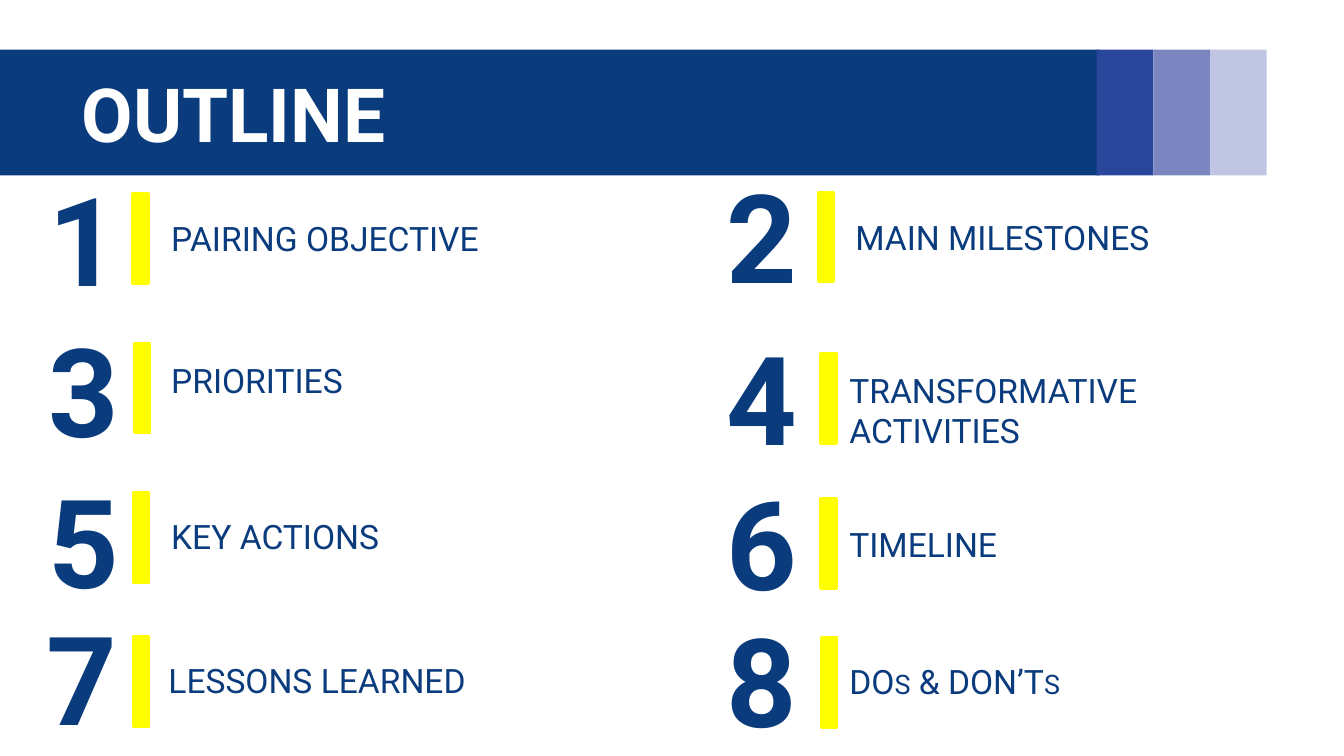
"""Build the outline slide: a title band over eight numbered topics in two columns."""
from dataclasses import dataclass

from pptx import Presentation
from pptx.dml.color import RGBColor
from pptx.enum.shapes import MSO_SHAPE
from pptx.enum.text import MSO_ANCHOR
from pptx.util import Inches, Pt


@dataclass(frozen=True)
class Theme:
    font: str = "Roboto"
    navy: str = "0A3B7D"
    blue: str = "2A469B"
    lilac: str = "7B86C0"
    mist: str = "C1C5E4"
    yellow: str = "FFFE01"
    white: str = "FFFFFF"
    title_size: int = 40
    number_size: int = 66
    label_size: int = 18
    bar_line: int = 2


theme = Theme()
deck = Presentation()
deck.slide_width = Inches(10)
deck.slide_height = deck.slide_width * 9 // 16
page = deck.slides.add_slide(deck.slide_layouts[6])
cell = deck.slide_width / 100


def add_block(area, color, line_width=0):
    block = page.shapes.add_shape(MSO_SHAPE.RECTANGLE, *(round(side * cell) for side in area))
    block.shadow.inherit = False
    block.fill.solid()
    block.fill.fore_color.rgb = RGBColor.from_string(color)
    if line_width:
        block.line.color.rgb = RGBColor.from_string(color)
        block.line.width = Pt(line_width)
    else:
        block.line.fill.background()


def add_text(area, runs, size, color, bold=False, inset=0, anchor=MSO_ANCHOR.TOP):
    box = page.shapes.add_textbox(*(round(side * cell) for side in area))
    frame = box.text_frame
    frame.word_wrap = True
    frame.vertical_anchor = anchor
    frame.margin_left = frame.margin_right = round(inset * cell)
    frame.margin_top = frame.margin_bottom = round(inset * cell / 2)
    para = frame.paragraphs[0]
    for text, small_caps in runs:
        span = para.add_run()
        span.text = text
        span.font.name = theme.font
        span.font.size = Pt(size)
        span.font.bold = bold
        span.font.color.rgb = RGBColor.from_string(color)
        if small_caps:
            span.font._element.set("cap", "small")


band_top, band_height = 3.7, 9.36
add_block((0, band_top, 81.8, band_height), theme.navy)
for index, color in enumerate((theme.blue, theme.lilac, theme.mist)):
    add_block((81.6 + index * 4.22, band_top, 4.22, band_height), color)
add_text((5.1, band_top, 72.1, band_height), [("OUTLINE", False)], theme.title_size,
         theme.white, bold=True, inset=1, anchor=MSO_ANCHOR.MIDDLE)

topics = [
    ([("PAIRING OBJECTIVE", False)], (3.6, 12.15), (9.9, 14.45), (12.74, 16.2)),
    ([("MAIN MILESTONES", False)], (54.05, 11.95), (60.9, 14.35), (63.64, 16.15)),
    ([("PRIORITIES", False)], (3.6, 23.4), (10, 25.6), (12.74, 26.8)),
    ([("TRANSFORMATIVE ACTIVITIES", False)], (54.05, 24), (61.1, 26.35), (63.2, 27.5)),
    ([("KEY ACTIONS", False)], (3.6, 34.6), (9.95, 36.7), (12.74, 38.4)),
    ([("TIMELINE", False)], (54.05, 34.75), (61.1, 37.15), (63.2, 39)),
    ([("LESSONS LEARNED", False)], (3.45, 44.85), (9.95, 47.4), (12.54, 49.1)),
    ([("DO", False), ("s", True), (" & DON’T", False), ("s", True)],
     (54.05, 44.95), (61.15, 47.5), (63.2, 49.2)),
]
for number, (runs, number_at, bar_at, label_at) in enumerate(topics, start=1):
    add_text((*number_at, 7.5, 10.3), [(str(number), False)], theme.number_size,
             theme.navy, bold=True)
    add_block((*bar_at, 1.1, 6.6), theme.yellow, theme.bar_line)
    add_text((*label_at, 32.4, 3), runs, theme.label_size, theme.navy)

deck.save("out.pptx")
